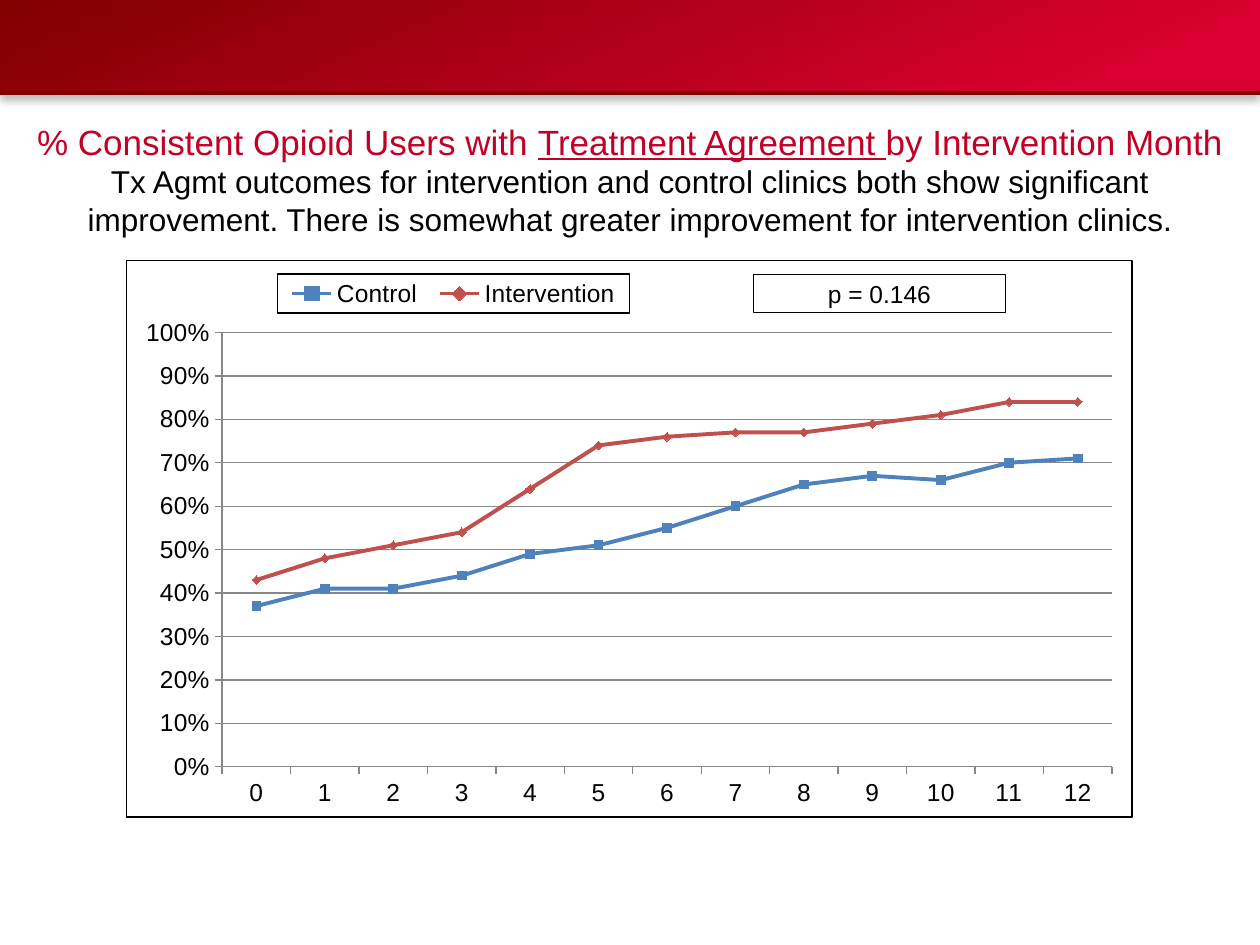
from lxml import etree
from pptx import Presentation
from pptx.chart.data import CategoryChartData
from pptx.dml.color import RGBColor
from pptx.enum.chart import XL_CHART_TYPE as ChartType, XL_LEGEND_POSITION as LegendPosition
from pptx.enum.chart import XL_MARKER_STYLE as Marker, XL_TICK_MARK as Tick
from pptx.enum.shapes import MSO_CONNECTOR as Connector, MSO_SHAPE as Shape
from pptx.enum.text import MSO_ANCHOR as Anchor, PP_ALIGN as Align
from pptx.oxml import parse_xml
from pptx.oxml.ns import nsdecls, qn
from pptx.util import Inches, Pt


def color(value):
    return RGBColor.from_string(value)


def layout_xml(x, y, width, height, inner=False):
    target = '<c:layoutTarget val="inner"/>' if inner else ""
    return parse_xml(
        f'<c:layout {nsdecls("c")}><c:manualLayout>{target}'
        '<c:xMode val="edge"/><c:yMode val="edge"/>'
        f'<c:x val="{x}"/><c:y val="{y}"/><c:w val="{width}"/><c:h val="{height}"/>'
        '</c:manualLayout></c:layout>')


deck = Presentation()
deck.slide_width, deck.slide_height = Inches(10), Inches(7.5)
page = deck.slides.add_slide(deck.slide_layouts[5])
shapes = page.shapes

banner = shapes.add_shape(Shape.RECTANGLE, 0, 0, Inches(10), Inches(0.74))
banner.line.fill.background()
banner.fill.gradient()
banner.fill.gradient_angle = 294
for stop, (position, shade) in zip(banner.fill.gradient_stops, [(0, "800000"), (0.87, "D8002E")]):
    stop.position = position
    stop.color.rgb = color(shade)
banner.shadow.inherit = False
effects = banner._element.spPr.find(qn("a:effectLst"))
effects.append(parse_xml(
    f'<a:outerShdw {nsdecls("a")} blurRad="{Pt(5)}" dist="{Pt(3.8)}" dir="5400000" rotWithShape="0">'
    '<a:srgbClr val="000000"><a:alpha val="25000"/></a:srgbClr></a:outerShdw>'))

rule = shapes.add_connector(Connector.STRAIGHT, 0, Inches(0.74), Inches(10), Inches(0.74))
rule.line.color.rgb = color("800000")
rule.line.width = Pt(2)
etree.SubElement(rule._element.spPr, qn("a:effectLst"))

title = shapes.title
title.left, title.top, title.width, title.height = 0, Inches(0.77), Inches(10), Inches(1.3)
frame = title.text_frame
frame.word_wrap = True
frame.vertical_anchor = Anchor.MIDDLE
frame.margin_left = frame.margin_right = Inches(0.2)
para = frame.paragraphs[0]
para.alignment = Align.CENTER
title_runs = [
    ("% Consistent Opioid Users with ", 20, "C20027", False),
    ("Treatment Agreement ", 20, "C20027", True),
    ("by Intervention Month", 20, "C20027", False),
    ("Tx Agmt outcomes for intervention and control clinics both show significant improvement. "
     "There is somewhat greater improvement for intervention clinics.", 18, "000000", False),
]
for text, size, shade, underlined in title_runs:
    if size == 18:
        para.add_line_break()
    span = para.add_run()
    span.text = text
    span.font.name = "Arial"
    span.font.size = Pt(size)
    span.font.color.rgb = color(shade)
    span.font.underline = underlined

series_styles = [
    ("Control", "4F81BD", Marker.SQUARE,
     [0.37, 0.41, 0.41, 0.44, 0.49, 0.51, 0.55, 0.6, 0.65, 0.67, 0.66, 0.7, 0.71]),
    ("Intervention", "C0504D", Marker.DIAMOND,
     [0.43, 0.48, 0.51, 0.54, 0.64, 0.74, 0.76, 0.77, 0.77, 0.79, 0.81, 0.84, 0.84]),
]
data = CategoryChartData(number_format="0%")
data.categories = [str(month) for month in range(13)]
for name, shade, marker, values in series_styles:
    data.add_series(name, values)
chart = shapes.add_chart(ChartType.LINE_MARKERS, Inches(1), Inches(2.06),
                         Inches(7.99), Inches(4.43), data).chart
chart.has_title = False
chart.font.name = "Arial"
chart.font.size = Pt(14)
chart.font.color.rgb = color("000000")
plot = chart.plots[0]
plot.vary_by_categories = False
for series, (name, shade, marker, values) in zip(plot.series, series_styles):
    series.smooth = False
    series.format.line.color.rgb = color(shade)
    series.format.line.width = Pt(2.25)
    series.marker.style = marker
    series.marker.size = 5
    series.marker.format.fill.solid()
    series.marker.format.fill.fore_color.rgb = color(shade)
    series.marker.format.line.color.rgb = color(shade)

months, percent = chart.category_axis, chart.value_axis
for axis in (months, percent):
    axis.major_tick_mark = Tick.OUTSIDE
    axis.minor_tick_mark = Tick.NONE
    axis.tick_labels.font.size = Pt(14)
    axis.format.line.color.rgb = color("878787")
months.has_major_gridlines = False
percent.minimum_scale, percent.maximum_scale, percent.major_unit = 0, 1, 0.1
percent.has_major_gridlines = True
percent.major_gridlines.format.line.color.rgb = color("878787")
percent.tick_labels.number_format = "0%"
percent.tick_labels.number_format_is_linked = False

chart.has_legend = True
legend = chart.legend
legend.position = LegendPosition.TOP
legend.include_in_layout = False
legend.font.size = Pt(14)

border = (f'<c:spPr {nsdecls("c", "a")}><a:solidFill><a:srgbClr val="FFFFFF"/></a:solidFill>'
          '<a:ln w="9525"><a:solidFill><a:srgbClr val="000000"/></a:solidFill></a:ln></c:spPr>')
space = chart._chartSpace
space.find(qn("c:chart")).addnext(parse_xml(border))
legend_node = legend._element
for old in legend_node.findall(qn("c:layout")):
    legend_node.remove(old)
legend_node.find(qn("c:legendPos")).addnext(layout_xml(0.15, 0.025, 0.35, 0.07))
legend_node.find(qn("c:overlay")).addnext(parse_xml(border))
plot_area = space.find(qn("c:chart")).find(qn("c:plotArea"))
for old in plot_area.findall(qn("c:layout")):
    plot_area.remove(old)
plot_area.insert(0, layout_xml(0.095, 0.13, 0.885, 0.78, inner=True))

box = shapes.add_shape(Shape.RECTANGLE, Inches(5.98), Inches(2.18), Inches(2), Inches(0.3))
box.shadow.inherit = False
box.fill.background()
box.line.color.rgb = color("000000")
box.line.width = Pt(0.75)
frame = box.text_frame
frame.word_wrap = True
frame.vertical_anchor = Anchor.MIDDLE
frame.margin_top = frame.margin_bottom = 0
frame.text = "p = 0.146"
para = frame.paragraphs[0]
para.alignment = Align.CENTER
span = para.runs[0]
span.font.name = "Arial"
span.font.size = Pt(14)
span.font.color.rgb = color("000000")

deck.save("out.pptx")
